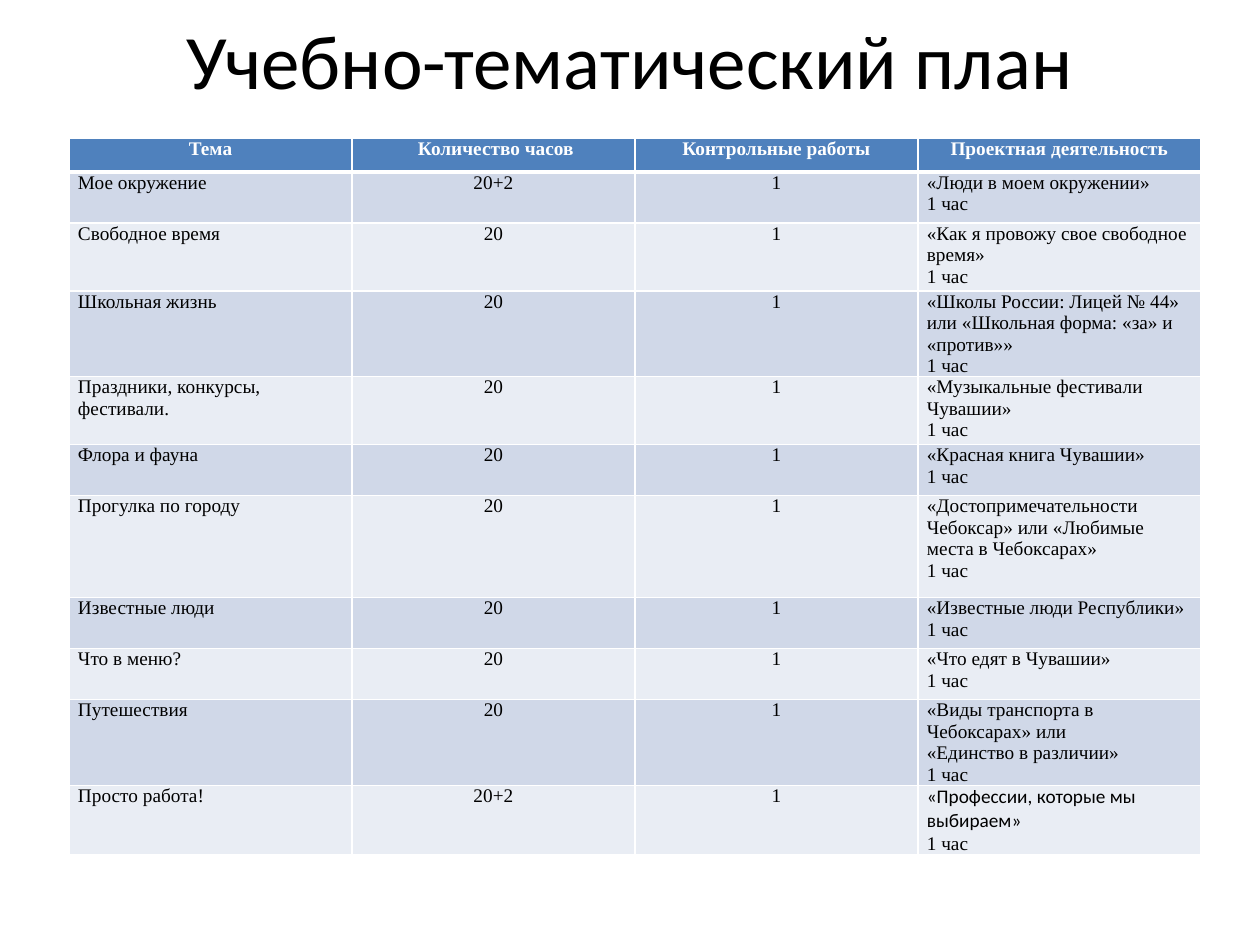
from lxml import etree
from pptx import Presentation
from pptx.dml.color import RGBColor
from pptx.enum.text import MSO_ANCHOR, PP_ALIGN
from pptx.oxml.ns import qn
from pptx.util import Pt

EMU_PER_PX = 914400 / 126
BLACK = RGBColor(0x00, 0x00, 0x00)
WHITE = RGBColor(0xFF, 0xFF, 0xFF)
HEADER_BLUE = RGBColor(0x4F, 0x81, 0xBD)
BANDS = (RGBColor(0xD0, 0xD8, 0xE8), RGBColor(0xE9, 0xED, 0xF4))
TITLE_FONT = "Calibri"
TABLE_FONT = "Times New Roman"

HEADERS = ("Тема", " Количество часов", "Контрольные работы",
           "Проектная деятельность")
HOUR = "1 час"
# Topic, hours, project lines, row height in px
TOPICS = (
    ("Мое окружение", "20+2", ["«Люди в моем окружении»"], 51),
    ("Свободное время", "20", ["«Как я провожу свое свободное время»"], 68),
    ("Школьная жизнь", "20",
     ["«Школы России: Лицей № 44» или «Школьная форма: «за» и «против»»"], 85),
    ("Праздники, конкурсы, фестивали.", "20",
     ["«Музыкальные фестивали Чувашии»"], 68),
    ("Флора и фауна", "20", ["«Красная книга Чувашии»"], 51),
    ("Прогулка по городу", "20",
     ["«Достопримечательности Чебоксар» или «Любимые места в Чебоксарах»"], 102),
    ("Известные люди", "20", ["«Известные люди Республики»"], 51),
    ("Что в меню?", "20", ["«Что едят в Чувашии»"], 51),
    ("Путешествия", "20",
     ["«Виды транспорта в Чебоксарах» или", "«Единство в различии»"], 85),
    ("Просто работа!", "20+2", ["«Профессии, которые мы выбираем»"], 64),
)
HEADER_HEIGHT = 34
COLUMN_WIDTH = 283
CENTRED_COLUMNS = (1, 2)


def px(length):
    return round(length * EMU_PER_PX)


def set_title(page, text):
    title = page.shapes.title
    title.left, title.top, title.width, title.height = map(px, (63, -20, 1134, 158))
    title.text_frame.vertical_anchor = MSO_ANCHOR.MIDDLE
    title.text_frame.text = text
    para = title.text_frame.paragraphs[0]
    para.alignment = PP_ALIGN.CENTER
    para.font.name = TITLE_FONT
    para.font.size = Pt(44)
    para.font.color.rgb = BLACK


def set_borders(cell, bottom_width):
    """Draw white cell edges, with a bottom edge of its own width in points."""
    properties = cell._tc.get_or_add_tcPr()
    widths = {"a:lnL": 1, "a:lnR": 1, "a:lnB": bottom_width}
    for position, (tag, width) in enumerate(widths.items()):
        line = etree.Element(qn(tag), w=str(Pt(width)))
        fill = etree.SubElement(line, qn("a:solidFill"))
        etree.SubElement(fill, qn("a:srgbClr"), val=str(WHITE))
        properties.insert(position, line)


def fill_cell(cell, lines, fill, color, centred, bold=False):
    cell.margin_left = cell.margin_right = px(9)
    cell.margin_top = cell.margin_bottom = 0
    cell.fill.solid()
    cell.fill.fore_color.rgb = fill
    set_borders(cell, 3 if bold else 1)
    cell.text_frame.text = "\n".join(lines)
    for para in cell.text_frame.paragraphs:
        para.alignment = PP_ALIGN.CENTER if centred else PP_ALIGN.LEFT
        para.font.name = TABLE_FONT
        para.font.size = Pt(11)
        para.font.bold = bold
        para.font.color.rgb = color


def add_plan_table(page):
    heights = [HEADER_HEIGHT] + [topic[-1] for topic in TOPICS]
    frame = page.shapes.add_table(
        len(heights), len(HEADERS), px(69), px(138),
        px(COLUMN_WIDTH * len(HEADERS)), px(sum(heights)))
    table = frame.table
    for column in table.columns:
        column.width = px(COLUMN_WIDTH)
    for row, height in zip(table.rows, heights):
        row.height = px(height)

    for column, header in enumerate(HEADERS):
        fill_cell(table.cell(0, column), [header], HEADER_BLUE, WHITE,
                  centred=True, bold=True)
    for index, (topic, hours, projects, _) in enumerate(TOPICS):
        contents = ([topic], [hours], ["1"], projects + [HOUR])
        for column, lines in enumerate(contents):
            fill_cell(table.cell(index + 1, column), lines, BANDS[index % 2],
                      BLACK, centred=column in CENTRED_COLUMNS)
    return table


def main():
    deck = Presentation()
    deck.slide_width, deck.slide_height = px(1260), px(945)
    page = deck.slides.add_slide(deck.slide_layouts[5])
    set_title(page, "Учебно-тематический план")
    table = add_plan_table(page)
    last_project = table.cell(len(TOPICS), len(HEADERS) - 1)
    last_project.text_frame.paragraphs[0].font.name = TITLE_FONT
    deck.save("out.pptx")


if __name__ == "__main__":
    main()
